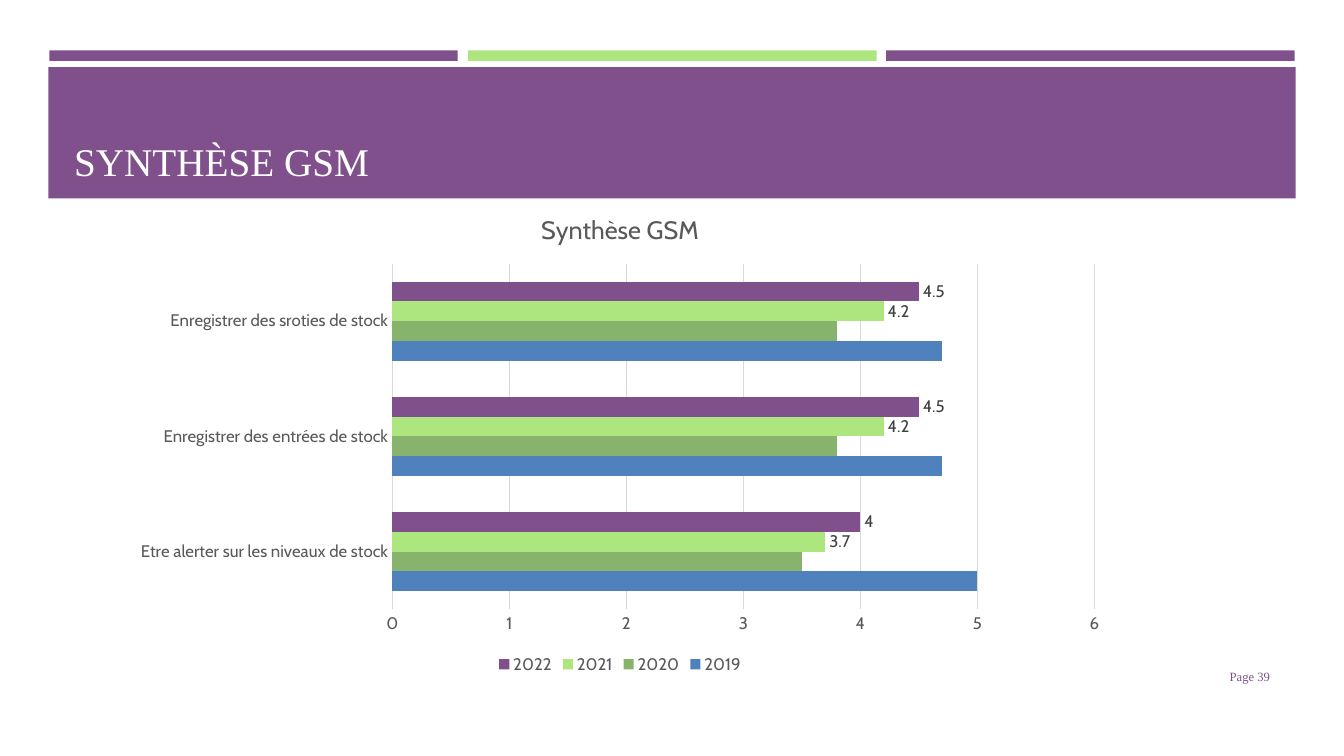
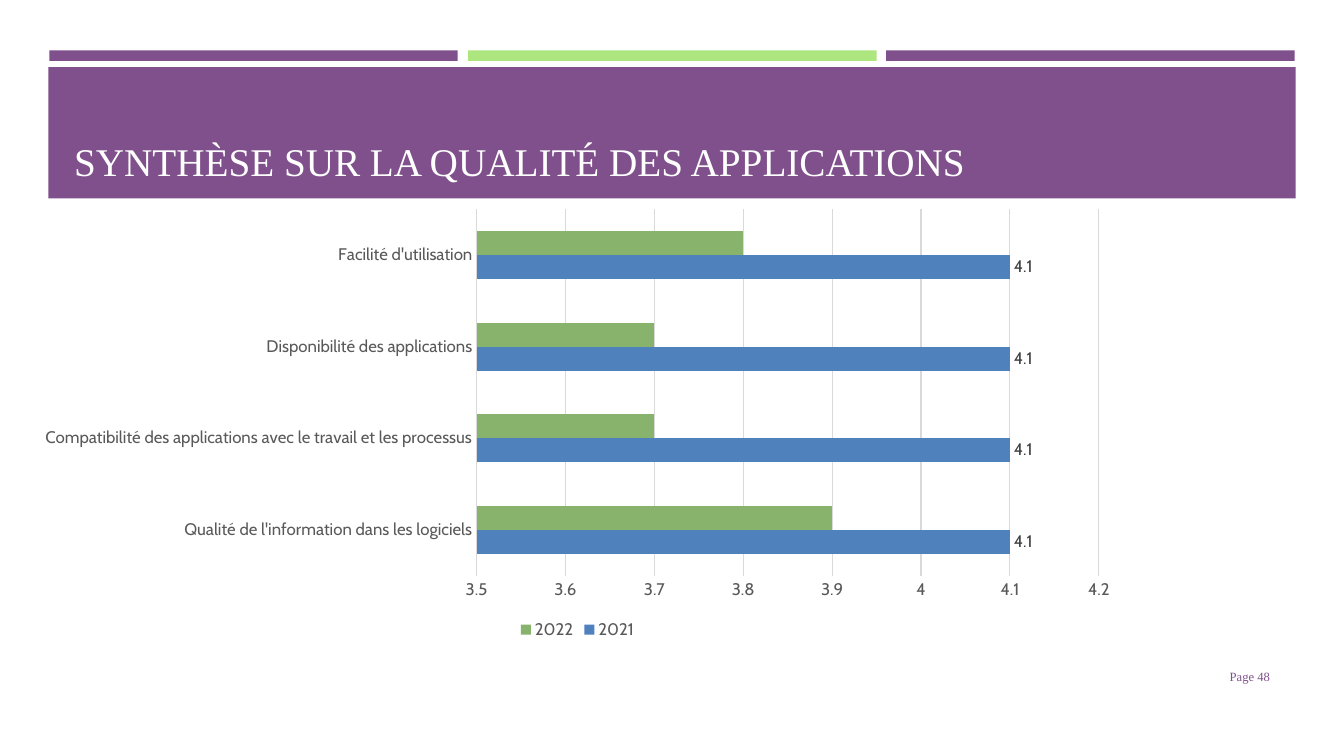
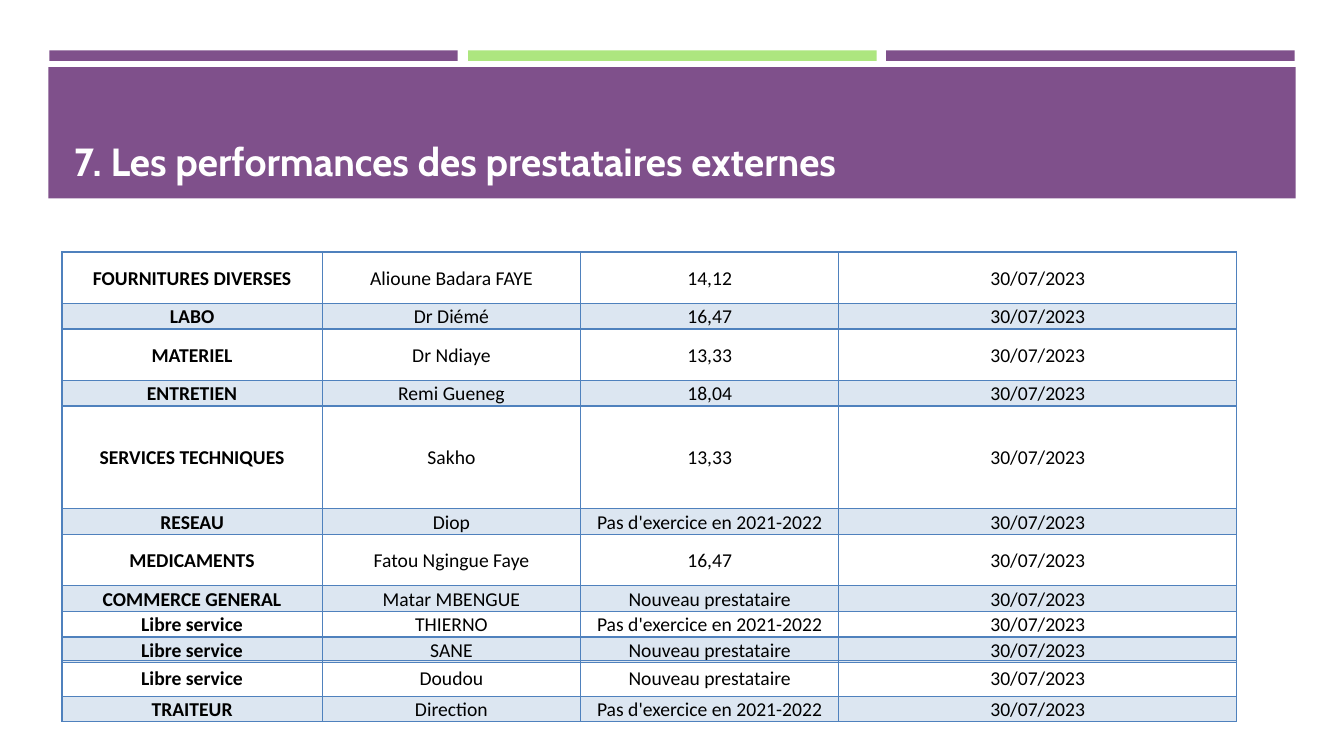
from dataclasses import dataclass
from typing import Optional

from lxml.etree import SubElement
from pptx import Presentation
from pptx.chart.data import CategoryChartData
from pptx.dml.color import RGBColor
from pptx.enum.chart import (
    XL_CHART_TYPE as ChartType,
    XL_LABEL_POSITION as LabelPosition,
    XL_LEGEND_POSITION as LegendPosition,
    XL_TICK_MARK as TickMark,
)
from pptx.enum.shapes import MSO_SHAPE as ShapeKind
from pptx.enum.text import MSO_ANCHOR as Anchor, MSO_AUTO_SIZE as AutoSize, PP_ALIGN as Align
from pptx.oxml.ns import qn
from pptx.util import Emu, Pt

EMU_PER_PX = 9525


@dataclass(frozen=True)
class Theme:
    purple: str = "7F508B"
    lime: str = "ADE67F"
    green: str = "88B36D"
    blue: str = "4F81BD"
    stripe: str = "DCE6F1"
    white: str = "FFFFFF"
    black: str = "000000"
    axis_text: str = "595959"
    label_text: str = "404040"
    grid: str = "D9D9D9"
    serif: str = "Times New Roman"
    sans: str = "Cabin"
    table_font: str = "Calibri"
    title_size: int = 28
    chart_title_size: int = 18
    table_size: int = 14
    chart_size: int = 12
    page_size: int = 9


THEME = Theme()


@dataclass(frozen=True)
class Box:
    left: int
    top: int
    width: int
    height: int

    def emu(self) -> tuple[Emu, Emu, Emu, Emu]:
        return px(self.left), px(self.top), px(self.width), px(self.height)


@dataclass(frozen=True)
class Series:
    name: str
    values: tuple[float, ...]
    color: str
    labelled: bool = False


@dataclass(frozen=True)
class BarChart:
    box: Box
    categories: tuple[str, ...]
    series: tuple[Series, ...]
    minimum: float
    maximum: float
    step: float
    title: Optional[str] = None


@dataclass(frozen=True)
class Provider:
    company: str
    contact: str
    score: str
    height: int = 24


TITLE_BOX = Box(61, 74, 1158, 106)
PAGE_BOX = Box(1109, 625, 110, 38)
TITLE_BAND = Box(46, 64, 1188, 125)
STRIPES = Box(47, 48, 1186, 10)
STRIPE_WIDTH = 389
TABLE_LEFT = 59
COLUMN_WIDTHS = (248, 246, 246, 379)
REVIEW_DATE = "30/07/2023"
NO_ACTIVITY = "Pas d'exercice en 2021-2022"
NEW_PROVIDER = "Nouveau prestataire"
SELF_SERVICE = "Libre service"

STOCK_CHART = BarChart(
    box=Box(115, 184, 951, 462),
    categories=(
        "Etre alerter sur les niveaux de stock",
        "Enregistrer des entrées de stock",
        "Enregistrer des sroties de stock",
    ),
    series=(
        Series("2019", (5, 4.7, 4.7), THEME.blue),
        Series("2020", (3.5, 3.8, 3.8), THEME.green),
        Series("2021", (3.7, 4.2, 4.2), THEME.lime, labelled=True),
        Series("2022", (4, 4.5, 4.5), THEME.purple, labelled=True),
    ),
    minimum=0, maximum=6, step=1,
    title="Synthèse GSM",
)

QUALITY_CHART = BarChart(
    box=Box(22, 191, 1056, 422),
    categories=(
        "Qualité de l'information dans les logiciels",
        "Compatibilité des applications avec le travail et les processus",
        "Disponibilité des applications",
        "Facilité d'utilisation",
    ),
    series=(
        Series("2021", (4.1, 4.1, 4.1, 4.1), THEME.blue, labelled=True),
        Series("2022", (3.9, 3.7, 3.7, 3.8), THEME.green),
    ),
    minimum=3.5, maximum=4.2, step=0.1,
)

MAIN_PROVIDERS = (
    Provider("FOURNITURES DIVERSES", "Alioune Badara FAYE", "14,12", 49),
    Provider("LABO", "Dr Diémé", "16,47"),
    Provider("MATERIEL", "Dr Ndiaye", "13,33", 49),
    Provider("ENTRETIEN", "Remi Gueneg", "18,04"),
    Provider("SERVICES TECHNIQUES", "Sakho", "13,33", 98),
    Provider("RESEAU", "Diop", NO_ACTIVITY),
    Provider("MEDICAMENTS", "Fatou Ngingue Faye", "16,47", 49),
    Provider("COMMERCE GENERAL", "Matar MBENGUE", NEW_PROVIDER),
    Provider(SELF_SERVICE, "THIERNO", NO_ACTIVITY),
    Provider(SELF_SERVICE, "SANE", NEW_PROVIDER),
)

LAST_PROVIDERS = (
    Provider(SELF_SERVICE, "Doudou", NEW_PROVIDER, 34),
    Provider("TRAITEUR", "Direction", NO_ACTIVITY),
)


def px(length: float) -> Emu:
    return Emu(round(length * EMU_PER_PX))


def rgb(color: str) -> RGBColor:
    return RGBColor.from_string(color)


def set_font(font, *, size: int, color: str, name: str, bold: bool = False) -> None:
    font.size = Pt(size)
    font.name = name
    font.bold = bold
    font.color.rgb = rgb(color)


def write_text(text_frame, text: str, *, size: int, color: str, name: str,
               bold: bool = False, align=Align.LEFT,
               line_spacing: Optional[float] = None) -> None:
    paragraph = text_frame.paragraphs[0]
    paragraph.alignment = align
    if line_spacing:
        paragraph.line_spacing = line_spacing
    run = paragraph.add_run()
    run.text = text
    set_font(run.font, size=size, color=color, name=name, bold=bold)


def move_to_layout(slide, box: Box, color: str) -> None:
    """Draw a plain band and hand it to the layout of the slide."""
    shape = slide.shapes.add_shape(ShapeKind.RECTANGLE, *box.emu())
    shape.shadow.inherit = False
    shape.fill.solid()
    shape.fill.fore_color.rgb = rgb(color)
    shape.line.fill.background()
    slide.slide_layout.element.cSld.spTree.insert(2, shape.element)


def decorate_layout(slide) -> None:
    pitch = (STRIPES.width - STRIPE_WIDTH) / 2
    for index, color in enumerate((THEME.purple, THEME.lime, THEME.purple)):
        left = round(STRIPES.left + index * pitch)
        move_to_layout(slide, Box(left, STRIPES.top, STRIPE_WIDTH, STRIPES.height), color)
    move_to_layout(slide, TITLE_BAND, THEME.purple)


def place_layout_title(layout) -> None:
    title = layout.placeholders[0]
    title.left, title.top, title.width, title.height = TITLE_BOX.emu()


def add_titled_slide(presentation, layout, title: str, *, name: str = THEME.serif,
                     bold: bool = False, page: Optional[int] = None):
    slide = presentation.slides.add_slide(layout)
    text_frame = slide.shapes.title.text_frame
    text_frame.word_wrap = True
    text_frame.auto_size = AutoSize.NONE
    text_frame.vertical_anchor = Anchor.BOTTOM
    write_text(text_frame, title, size=THEME.title_size, color=THEME.white,
               name=name, bold=bold)
    if page is not None:
        page_frame = slide.shapes.add_textbox(*PAGE_BOX.emu()).text_frame
        page_frame.word_wrap = True
        page_frame.vertical_anchor = Anchor.MIDDLE
        write_text(page_frame, f"Page {page}", size=THEME.page_size,
                   color=THEME.purple, name=THEME.serif, align=Align.RIGHT)
    return slide


def format_axes(chart, content: BarChart) -> None:
    category_axis, value_axis = chart.category_axis, chart.value_axis
    for axis in (category_axis, value_axis):
        axis.major_tick_mark = axis.minor_tick_mark = TickMark.NONE
        set_font(axis.tick_labels.font, size=THEME.chart_size,
                 color=THEME.axis_text, name=THEME.sans)
    value_axis.minimum_scale = content.minimum
    value_axis.maximum_scale = content.maximum
    value_axis.major_unit = content.step
    value_axis.format.line.fill.background()
    for line in (category_axis.format.line, value_axis.major_gridlines.format.line):
        line.color.rgb = rgb(THEME.grid)
        line.width = Pt(0.75)


def add_bar_chart(slide, content: BarChart) -> None:
    data = CategoryChartData()
    data.categories = content.categories
    for series in content.series:
        data.add_series(series.name, series.values)
    chart = slide.shapes.add_chart(ChartType.BAR_CLUSTERED, *content.box.emu(), data).chart
    set_font(chart.font, size=THEME.chart_size, color=THEME.axis_text, name=THEME.sans)
    chart.has_title = content.title is not None
    if content.title:
        write_text(chart.chart_title.text_frame, content.title,
                   size=THEME.chart_title_size, color=THEME.axis_text,
                   name=THEME.sans, align=Align.CENTER)
    chart.has_legend = True
    chart.legend.position = LegendPosition.BOTTOM
    chart.legend.include_in_layout = False
    set_font(chart.legend.font, size=THEME.chart_size, color=THEME.axis_text, name=THEME.sans)
    format_axes(chart, content)

    plot = chart.plots[0]
    plot.gap_width = 182
    plot.overlap = 0
    plot.vary_by_categories = False
    for bars, series in zip(plot.series, content.series):
        bars.format.fill.solid()
        bars.format.fill.fore_color.rgb = rgb(series.color)
        if series.labelled:
            labels = bars.data_labels
            labels.show_value = True
            labels.position = LabelPosition.OUTSIDE_END
            set_font(labels.font, size=THEME.chart_size,
                     color=THEME.label_text, name=THEME.sans)


def add_borders(cell, color: str) -> None:
    properties = cell._tc.get_or_add_tcPr()
    for side in ("a:lnL", "a:lnR", "a:lnT", "a:lnB"):
        line = SubElement(properties, qn(side), w=str(Pt(1)))
        fill = SubElement(line, qn("a:solidFill"))
        SubElement(fill, qn("a:srgbClr"), val=color)


def fill_cell(cell, text: str, *, bold: bool, striped: bool) -> None:
    cell.margin_left = cell.margin_right = px(2)
    cell.margin_top = cell.margin_bottom = 0
    cell.vertical_anchor = Anchor.MIDDLE
    add_borders(cell, THEME.blue)
    if striped:
        cell.fill.solid()
        cell.fill.fore_color.rgb = rgb(THEME.stripe)
    else:
        cell.fill.background()
    write_text(cell.text_frame, text, size=THEME.table_size, color=THEME.black,
               name=THEME.table_font, bold=bold, align=Align.CENTER, line_spacing=1.07)


def add_provider_table(slide, top: int, providers: tuple[Provider, ...]) -> None:
    height = sum(provider.height for provider in providers)
    box = Box(TABLE_LEFT, top, sum(COLUMN_WIDTHS), height)
    table = slide.shapes.add_table(len(providers), len(COLUMN_WIDTHS), *box.emu()).table
    table.first_row = table.horz_banding = False
    for column, width in zip(table.columns, COLUMN_WIDTHS):
        column.width = px(width)
    for row_index, provider in enumerate(providers):
        table.rows[row_index].height = px(provider.height)
        texts = (provider.company, provider.contact, provider.score, REVIEW_DATE)
        for column_index, text in enumerate(texts):
            fill_cell(table.cell(row_index, column_index), text,
                      bold=column_index == 0, striped=row_index % 2 == 1)


def main() -> None:
    presentation = Presentation()
    presentation.slide_width, presentation.slide_height = px(1280), px(720)
    layout = presentation.slide_layouts.get_by_name("Title Only")
    place_layout_title(layout)

    stock = add_titled_slide(presentation, layout, "SYNTHÈSE GSM", page=39)
    decorate_layout(stock)
    add_bar_chart(stock, STOCK_CHART)

    quality = add_titled_slide(presentation, layout,
                               "SYNTHÈSE SUR LA QUALITÉ DES APPLICATIONS", page=48)
    add_bar_chart(quality, QUALITY_CHART)

    providers = add_titled_slide(presentation, layout,
                                 "7. Les performances des prestataires externes",
                                 name=THEME.sans, bold=True)
    add_provider_table(providers, 240, MAIN_PROVIDERS)
    add_provider_table(providers, 629, LAST_PROVIDERS)

    presentation.save("out.pptx")


if __name__ == "__main__":
    main()
